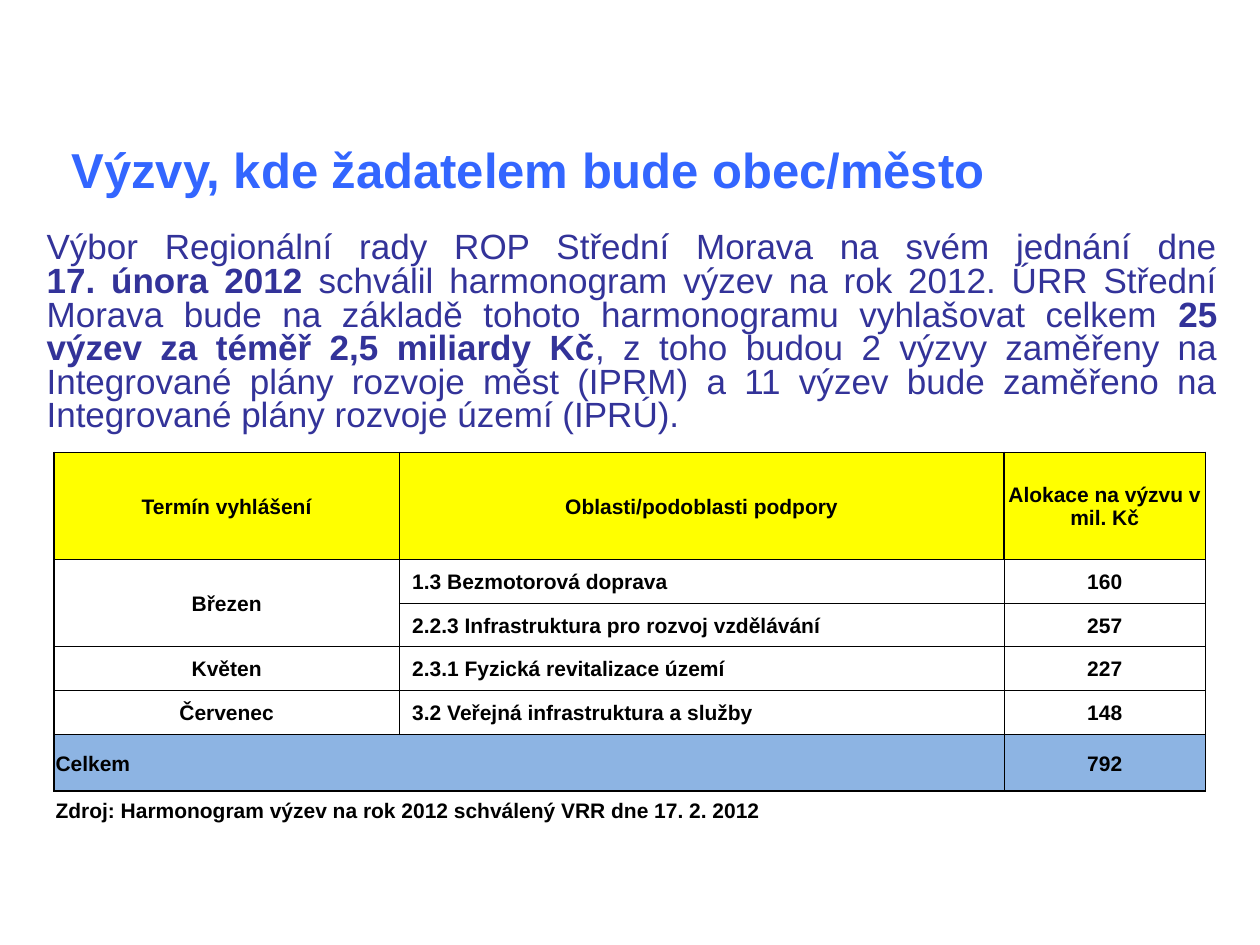
from dataclasses import dataclass
from typing import Optional

from lxml import etree
from pptx import Presentation
from pptx.dml.color import RGBColor
from pptx.enum.text import MSO_ANCHOR, PP_ALIGN
from pptx.oxml.ns import qn
from pptx.util import Cm, Pt

LEFT, CENTER, JUSTIFY = PP_ALIGN.LEFT, PP_ALIGN.CENTER, PP_ALIGN.JUSTIFY
TOP, MIDDLE = MSO_ANCHOR.TOP, MSO_ANCHOR.MIDDLE

FONT = "Arial"
COLORS = {
    "title": "3366FF",
    "body": "333399",
    "text": "000000",
    "border": "000000",
    "header": "FFFF00",
    "total": "8DB4E3",
}
LINE_BREAK = "\n"


@dataclass
class TextRun:
    text: str
    bold: bool = False


@dataclass
class CallRow:
    cells: tuple[str, str, str]
    height: float
    fill: Optional[str] = None


INTRODUCTION = [
    TextRun("Výbor Regionální rady ROP Střední Morava na svém jednání dne"),
    TextRun(LINE_BREAK),
    TextRun("17. února 2012", bold=True),
    TextRun(" schválil harmonogram výzev na rok 2012. ÚRR Střední Morava bude "
            "na základě tohoto harmonogramu vyhlašovat celkem "),
    TextRun("25 výzev za téměř 2,5 miliardy Kč", bold=True),
    TextRun(", z toho budou 2 výzvy zaměřeny na Integrované plány rozvoje měst "
            "(IPRM) a 11 výzev bude zaměřeno na Integrované plány rozvoje "
            "území (IPRÚ)."),
]

COLUMN_WIDTHS = (6.96, 12.19, 4.06)
ROWS = [
    CallRow(("Termín vyhlášení", "Oblasti/podoblasti podpory",
             "Alokace na výzvu v mil. Kč"), 2.16, "header"),
    CallRow(("Březen", "1.3 Bezmotorová doprava", "160"), 0.89),
    CallRow(("", "2.2.3 Infrastruktura pro rozvoj vzdělávání", "257"), 0.86),
    CallRow(("Květen", "2.3.1 Fyzická revitalizace území", "227"), 0.89),
    CallRow(("Červenec", "3.2 Veřejná infrastruktura a služby", "148"), 0.89),
    CallRow(("Celkem", "", "792"), 1.14, "total"),
    CallRow(("Zdroj: Harmonogram výzev na rok 2012 schválený VRR dne 17. 2. 2012",
             "", ""), 0.76),
]
TOTAL_ROW, SOURCE_ROW = len(ROWS) - 2, len(ROWS) - 1
LAST_COLUMN = len(COLUMN_WIDTHS) - 1


def write_text(text_frame, runs: list[TextRun], *, size: float, color: str,
               align=LEFT, anchor=TOP, line_spacing: Optional[float] = None) -> None:
    text_frame.word_wrap = True
    text_frame.vertical_anchor = anchor
    paragraph = text_frame.paragraphs[0]
    paragraph.alignment = align
    if line_spacing:
        paragraph.line_spacing = line_spacing
    for part in runs:
        if part.text == LINE_BREAK:
            paragraph.add_line_break()
            continue
        run = paragraph.add_run()
        run.text = part.text
        run.font.name = FONT
        run.font.size = Pt(size)
        run.font.bold = part.bold
        run.font.color.rgb = RGBColor.from_string(COLORS[color])


def border_widths(row: int, column: int) -> dict[str, float]:
    """Heavy lines around the header and the table, thin lines inside."""
    if row == SOURCE_ROW:
        return {"L": 0, "R": 0, "T": 1, "B": 0}
    header = row == 0
    heavy = {
        "L": header or column == 0,
        "R": header or column == LAST_COLUMN,
        "T": row <= 1,
        "B": header or row == TOTAL_ROW,
    }
    return {side: 1 if is_heavy else 0.5 for side, is_heavy in heavy.items()}


def set_borders(cell, widths: dict[str, float]) -> None:
    properties = cell._tc.get_or_add_tcPr()
    for position, (side, width) in enumerate(widths.items()):
        line = etree.Element(qn(f"a:ln{side}"), w=str(Pt(width)))
        if width:
            fill = etree.SubElement(line, qn("a:solidFill"))
            etree.SubElement(fill, qn("a:srgbClr"), val=COLORS["border"])
        else:
            etree.SubElement(line, qn("a:noFill"))
        properties.insert(position, line)


def format_cell(cell, row: int, column: int) -> None:
    is_area = column == 1 and 0 < row < TOTAL_ROW
    is_left = is_area or (column == 0 and row >= TOTAL_ROW)
    cell.margin_left = Cm(0.26 if is_area else 0.03)
    cell.margin_right = cell.margin_top = Cm(0.03)
    cell.margin_bottom = 0
    cell.vertical_anchor = MIDDLE
    if ROWS[row].fill:
        cell.fill.solid()
        cell.fill.fore_color.rgb = RGBColor.from_string(COLORS[ROWS[row].fill])
    else:
        cell.fill.background()
    write_text(cell.text_frame, [TextRun(ROWS[row].cells[column], bold=True)],
               size=12, color="text", align=LEFT if is_left else CENTER,
               anchor=MIDDLE)
    set_borders(cell, border_widths(row, column))


def add_calls_table(slide) -> None:
    frame = slide.shapes.add_table(
        len(ROWS), len(COLUMN_WIDTHS), Cm(1.09), Cm(9.12),
        Cm(sum(COLUMN_WIDTHS)), Cm(sum(row.height for row in ROWS)))
    table = frame.table
    table.first_row = table.horz_banding = False
    for column, width in zip(table.columns, COLUMN_WIDTHS):
        column.width = Cm(width)
    for row, data in enumerate(ROWS):
        table.rows[row].height = Cm(data.height)
        for column in range(len(COLUMN_WIDTHS)):
            format_cell(table.cell(row, column), row, column)
    # March spans two rows, the total and the source two columns
    table.cell(1, 0).merge(table.cell(2, 0))
    for row in (TOTAL_ROW, SOURCE_ROW):
        table.cell(row, 0).merge(table.cell(row, 1))


def main() -> None:
    presentation = Presentation()
    presentation.slide_width, presentation.slide_height = Cm(25.4), Cm(19.05)
    slide = presentation.slides.add_slide(presentation.slide_layouts[5])

    # Title
    title = slide.shapes.title
    title.left, title.top = Cm(1.19), Cm(2.39)
    title.width, title.height = Cm(22.86), Cm(2.01)
    write_text(title.text_frame,
               [TextRun("Výzvy, kde žadatelem bude obec/město", bold=True)],
               size=28, color="title", anchor=MIDDLE)

    # Introduction
    introduction = slide.shapes.add_textbox(Cm(0.69), Cm(4.57), Cm(24.1), Cm(4.57))
    write_text(introduction.text_frame, INTRODUCTION, size=20, color="body",
               align=JUSTIFY, line_spacing=0.8)

    # Table of calls
    add_calls_table(slide)
    presentation.save("out.pptx")


if __name__ == "__main__":
    main()
